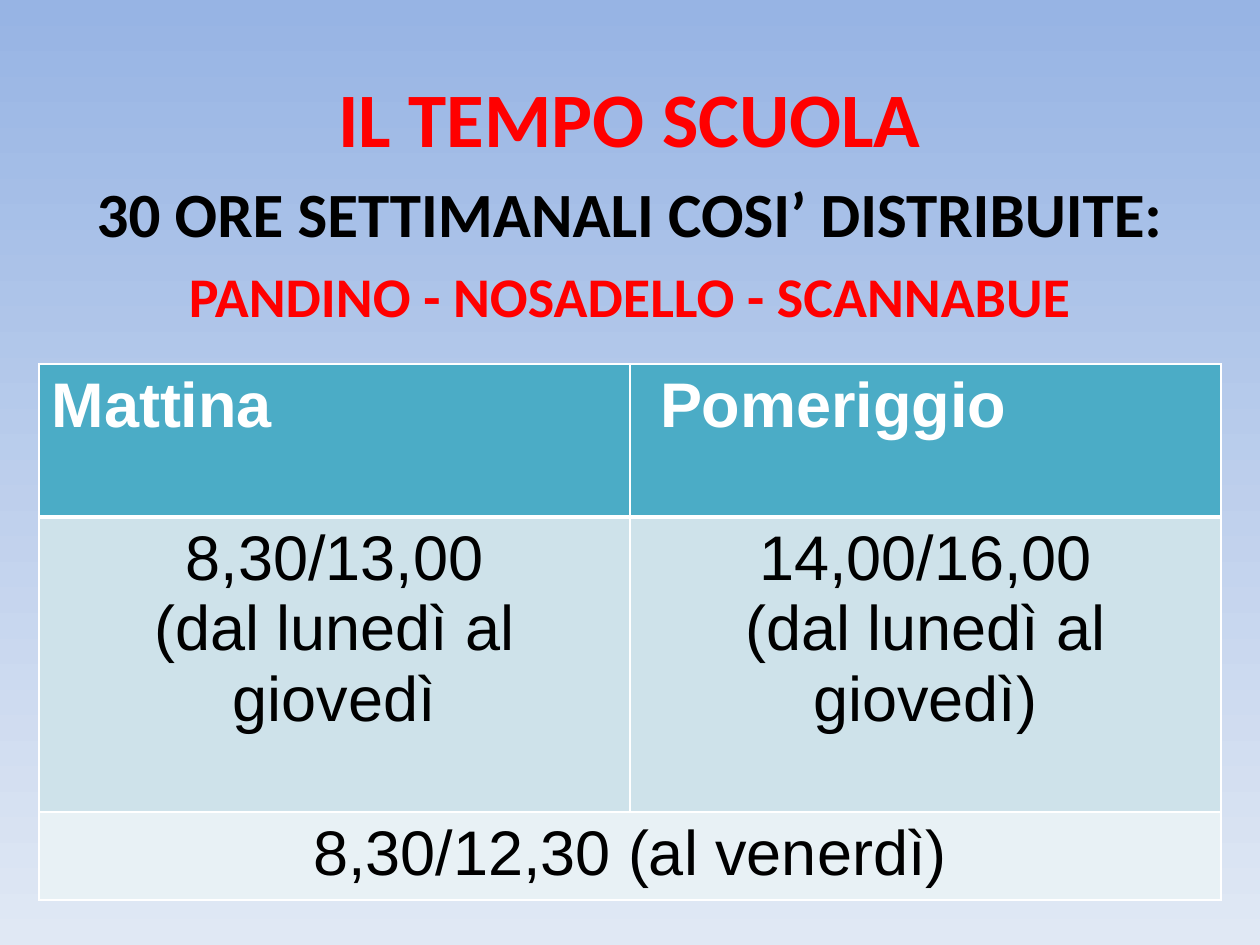
from pptx import Presentation
from pptx.dml.color import RGBColor as Rgb
from pptx.enum.text import MSO_ANCHOR as Anchor, PP_ALIGN as Align
from pptx.oxml.ns import qn
from pptx.util import Pt
from lxml.etree import SubElement as Sub

SCALE = 914400 / 126
RED = Rgb(0xFF, 0, 0)
BLACK = Rgb(0, 0, 0)
WHITE = Rgb(0xFF, 0xFF, 0xFF)
TEAL = Rgb(0x4B, 0xAC, 0xC6)
MIST = Rgb(0xCE, 0xE2, 0xEA)
PALE = Rgb(0xE8, 0xF1, 0xF5)
SKY = Rgb(0x97, 0xB4, 0xE4)
HAZE = Rgb(0xE0, 0xE8, 0xF4)

HEAD = dict(name="Arial", size=Pt(36), bold=True, color=WHITE)
BODY = dict(HEAD, bold=False, color=BLACK)
DAYS = "(dal lunedì al giovedì"
ROWS = [
    (153, TEAL, HEAD, Align.LEFT, [["Mattina"], [" Pomeriggio"]]),
    (295, MIST, BODY, Align.CENTER,
     [["8,30/13,00", DAYS], ["14,00/16,00", DAYS + ")"]]),
    (83, PALE, BODY, Align.CENTER, [["8,30/12,30 (al venerdì)"]]),
]


def px(num):
    return round(num * SCALE)


def place(shape, *box):
    for key, num in zip(("left", "top", "width", "height"), box):
        setattr(shape, key, px(num))


def style(font, form):
    for key, val in form.items():
        if key == "color":
            font.color.rgb = val
        else:
            setattr(font, key, val)


def write(frame, lines, align, gap=0):
    """Fill a frame with (text, format) lines, gap points apart."""
    frame.word_wrap = True
    for num, (text, form) in enumerate(lines):
        para = frame.add_paragraph() if num else frame.paragraphs[0]
        para.alignment = align
        para.space_before = Pt(gap if num else 0)
        run = para.add_run()
        run.text = text
        style(run.font, form)


def paint(slide):
    fill = slide.background.fill
    fill.gradient()
    fill.gradient_angle = 270
    for stop, color in zip(fill.gradient_stops, (SKY, HAZE)):
        stop.color.rgb = color


def edge(cell, top, bottom):
    """Draw white cell borders; top and bottom are widths in points."""
    props = cell._tc.get_or_add_tcPr()
    for side, width in zip("LRTB", (1, 1, top, bottom)):
        line = Sub(props, qn(f"a:ln{side}"), w=str(Pt(width)))
        Sub(Sub(line, qn("a:solidFill")), qn("a:srgbClr"), val=str(WHITE))


def add_hours(slide):
    high = sum(row[0] for row in ROWS)
    frame = slide.shapes.add_table(len(ROWS), 2, px(39), px(364),
                                   px(1182), px(high))
    table = frame.table
    for num, (tall, color, form, align, texts) in enumerate(ROWS):
        table.rows[num].height = px(tall)
        for cell in table.rows[num].cells:
            edge(cell, 3 if num == 1 else 1, 3 if num == 0 else 1)
            cell.fill.solid()
            cell.fill.fore_color.rgb = color
        for col, lines in enumerate(texts):
            write(table.cell(num, col).text_frame,
                  [(line, form) for line in lines], align)
    last = len(ROWS) - 1
    table.cell(last, 0).merge(table.cell(last, 1))


def main():
    deck = Presentation()
    deck.slide_width, deck.slide_height = px(1260), px(945)
    slide = deck.slides.add_slide(deck.slide_layouts[5])
    paint(slide)

    bold = dict(name="Calibri", bold=True)
    title = slide.shapes.title
    place(title, 63, 38, 1134, 157)
    title.text_frame.vertical_anchor = Anchor.MIDDLE
    write(title.text_frame,
          [("IL TEMPO SCUOLA", dict(bold, size=Pt(44), color=RED))],
          Align.CENTER)

    intro = slide.shapes.add_textbox(0, px(168), px(1260), px(180))
    write(intro.text_frame, [
        ("30 ORE SETTIMANALI COSI’ DISTRIBUITE:",
         dict(bold, size=Pt(36), color=BLACK)),
        ("PANDINO - NOSADELLO - SCANNABUE",
         dict(bold, size=Pt(32), color=RED)),
    ], Align.CENTER, 6.4)

    add_hours(slide)
    deck.save("out.pptx")


if __name__ == "__main__":
    main()
